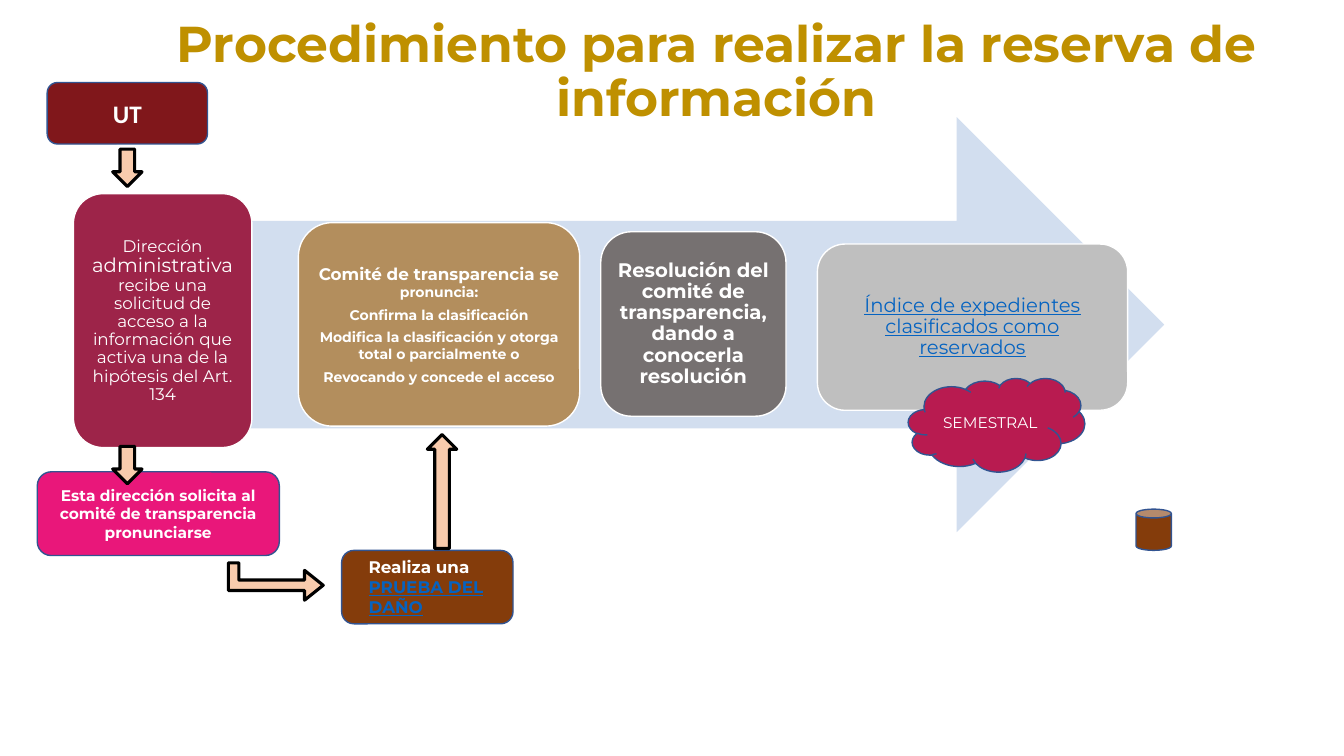
from pptx import Presentation
from pptx.dml.color import RGBColor
from pptx.enum.shapes import MSO_SHAPE
from pptx.enum.text import MSO_ANCHOR, PP_ALIGN
from pptx.util import Cm, Pt

COLORS = {
    "gold": "BF9000", "sky": "D2DEEF", "wine": "9D2449", "tan": "B38E5D",
    "gray": "767171", "silver": "BFBFBF", "pink": "E9177A", "brown": "843C0B",
    "peach": "F8CBAD", "crimson": "B81B50", "maroon": "80171B",
    "blue": "325491", "link": "0563C1", "white": "FFFFFF", "black": "000000",
}


def add_box(kind, box, fill, line=None, width=1):
    sp = s.shapes.add_shape(kind, *[Cm(v) for v in box])
    sp.shadow.inherit = False
    sp.fill.solid()
    sp.fill.fore_color.rgb = RGBColor.from_string(COLORS[fill])
    if line:
        sp.line.color.rgb = RGBColor.from_string(COLORS[line])
        sp.line.width = Pt(width)
    else:
        sp.line.fill.background()
    return sp


def write(sp, paragraphs, inset=(0.25, 0.13, 0.25, 0.13), spacing=1.0, after=0,
          align=PP_ALIGN.CENTER, font="Montserrat"):
    tf = sp.text_frame
    tf.word_wrap = True
    tf.vertical_anchor = MSO_ANCHOR.MIDDLE
    tf.margin_left, tf.margin_top, tf.margin_right, tf.margin_bottom = [Cm(v) for v in inset]
    for i, runs in enumerate(paragraphs):
        p = tf.add_paragraph() if i else tf.paragraphs[0]
        p.alignment = align
        p.line_spacing = spacing
        p.space_after = Pt(after)
        for text, size, bold, color in runs:
            r = p.add_run()
            r.text = text
            r.font.name = font
            r.font.size = Pt(size)
            r.font.bold = bold
            r.font.underline = color == "link"
            r.font.color.rgb = RGBColor.from_string(COLORS[color])


prs = Presentation()
prs.slide_width = Cm(33.87)
prs.slide_height = Cm(19.05)
s = prs.slides.add_slide(prs.slide_layouts[6])

title = s.shapes.add_textbox(Cm(3.45), Cm(0.76), Cm(29.21), Cm(2.16))
write(title, [[("Procedimiento para realizar la reserva de información", 36, True, "gold")]],
      spacing=0.9)

add_box(MSO_SHAPE.RIGHT_ARROW, (3.48, 2.95, 25.86, 10.46), "sky")

steps = [
    ((1.85, 4.88, 4.5, 6.4), "wine", 0.13, 0.9, [[
        ("Dirección ", 12, False, "white"),
        ("administrativa", 14, False, "white"),
        (" recibe una solicitud de acceso a la información que activa una de la "
         "hipótesis del Art. 134", 12, False, "white")]]),
    ((7.52, 5.61, 7.09, 5.13), "tan", 0.13, 1.0, [
        [("Comité de transparencia se ", 12, True, "white"), ("pronuncia:", 10, True, "white")],
        [("Confirma la clasificación", 10, True, "white")],
        [("Modifica la clasificación y otorga total o parcialmente o", 10, True, "white")],
        [("Revocando y concede el acceso", 10, True, "white")]]),
    ((15.14, 5.84, 4.67, 4.65), "gray", 0.15, 0.9, [[
        ("Resolución del comité de transparencia, dando a conocerla resolución",
         14, True, "white")]]),
    ((20.6, 6.15, 7.82, 4.19), "silver", 0.15, 0.9, [[
        ("Índice de expedientes clasificados como reservados", 14, False, "link")]]),
]
for box, fill, inset, spacing, paragraphs in steps:
    sp = add_box(MSO_SHAPE.ROUNDED_RECTANGLE, box, fill, "white")
    write(sp, paragraphs, inset=(inset,) * 4, spacing=spacing, after=4)

request = add_box(MSO_SHAPE.ROUNDED_RECTANGLE, (0.94, 11.89, 6.1, 2.11), "pink", "blue")
write(request, [[("Esta dirección solicita al comité de transparencia pronunciarse",
                  11, True, "white")]])

proof = add_box(MSO_SHAPE.ROUNDED_RECTANGLE, (8.61, 13.87, 4.32, 1.85), "brown", "blue")
write(proof, [[("Realiza una ", 12, True, "white"), ("PRUEBA DEL DAÑO", 12, True, "link")]],
      inset=(0.59, 0, 0.15, 0), align=PP_ALIGN.LEFT)

bent = add_box(MSO_SHAPE.BENT_UP_ARROW, (6.48, 13.46, 0.94, 2.39), "peach", "black", 2.25)
bent.rotation = 90
for i, value in enumerate((0.28, 0.4, 0.5)):
    bent.adjustments[i] = value

for left, top, height, rotation in [(2.84, 3.76, 0.94, 0), (2.84, 11.25, 0.94, 0),
                                    (10.77, 10.95, 2.87, 180)]:
    arrow = add_box(MSO_SHAPE.DOWN_ARROW, (left, top, 0.74, height), "peach", "black", 2.25)
    arrow.rotation = rotation

cloud = add_box(MSO_SHAPE.CLOUD, (22.89, 9.53, 4.45, 2.36), "crimson", "blue")
write(cloud, [[("SEMESTRAL", 11, False, "white")]])

add_box(MSO_SHAPE.CAN, (28.63, 12.83, 0.89, 1.04), "brown", "blue")

unit = add_box(MSO_SHAPE.ROUNDED_RECTANGLE, (1.19, 2.08, 4.04, 1.55), "maroon", "blue")
write(unit, [[("UT", 18, True, "white")]], font="Calibri")

prs.save("out.pptx")
